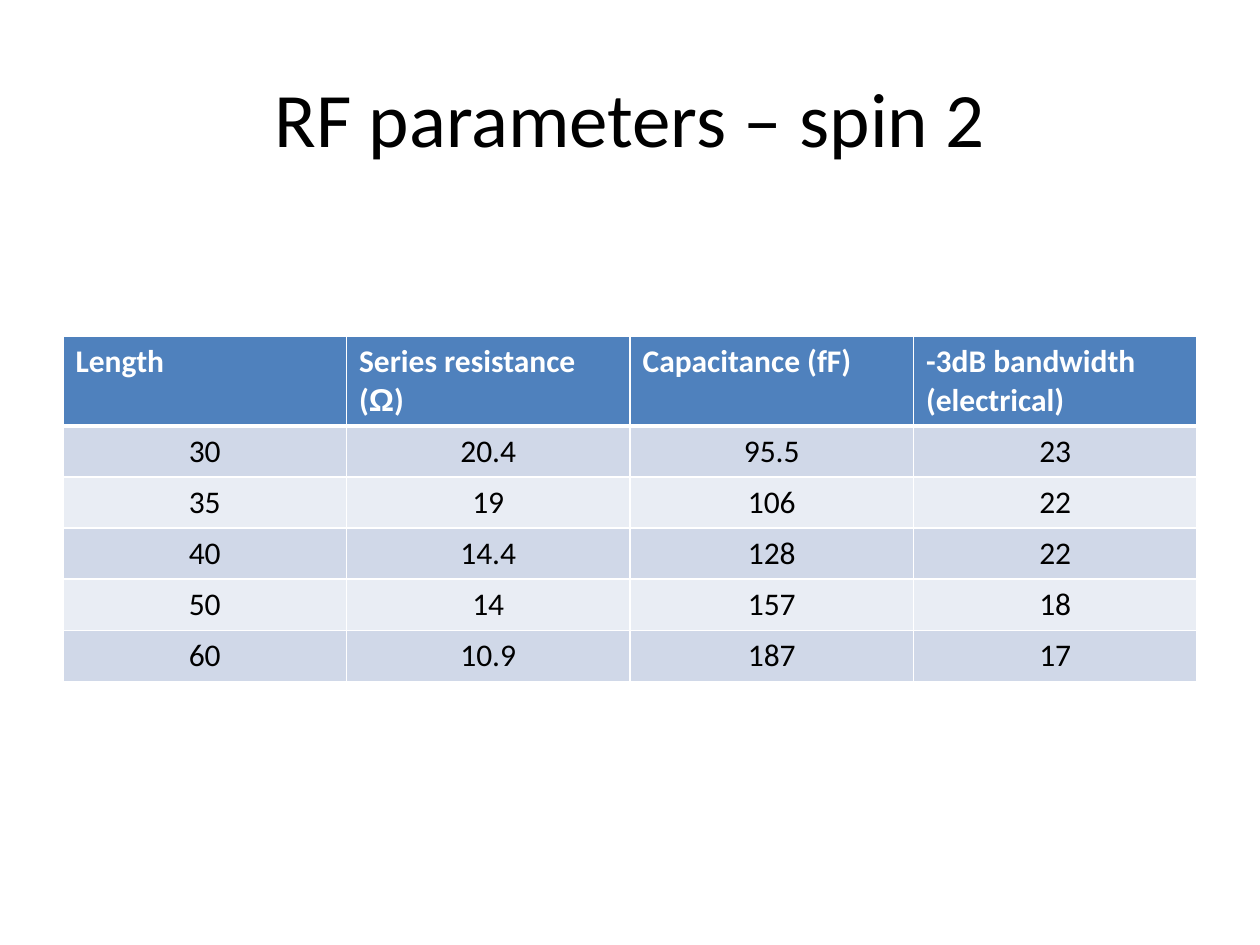
from dataclasses import dataclass

from lxml import etree
from pptx import Presentation
from pptx.dml.color import RGBColor
from pptx.enum.text import MSO_ANCHOR, PP_ALIGN
from pptx.oxml.ns import qn
from pptx.util import Cm, Pt

CENTER, LEFT = PP_ALIGN.CENTER, PP_ALIGN.LEFT
TOP, MIDDLE = MSO_ANCHOR.TOP, MSO_ANCHOR.MIDDLE
TITLE_ONLY = 5

COLORS = {
    "black": "000000",
    "white": "FFFFFF",
    "header": "4F81BD",
    "band_dark": "D0D8E8",
    "band_light": "E9EDF4",
}
FONT, SYMBOL_FONT = "Calibri", "Arial"
SYMBOL = "Ω"

HEADERS = ["Length", "Series resistance (Ω)", "Capacitance (fF)",
           "-3dB bandwidth (electrical)"]
ROWS = [
    ("30", "20.4", "95.5", "23"),
    ("35", "19", "106", "22"),
    ("40", "14.4", "128", "22"),
    ("50", "14", "157", "18"),
    ("60", "10.9", "187", "17"),
]
UNPADDED_COLUMNS = (1, 2)
LEFT_EDGE, WIDTH = Cm(1.27), Cm(22.86)
HEADER_HEIGHT, ROW_HEIGHT = Cm(1.78), Cm(1.03)


@dataclass
class CellStyle:
    fill: str
    color: str
    bold: bool
    align: PP_ALIGN
    anchor: MSO_ANCHOR
    top: float = 1
    bottom: float = 1
    padded: bool = True


def rgb(name: str) -> RGBColor:
    return RGBColor.from_string(COLORS[name])


def add_run(p, text: str, size: float, color: str, bold: bool = False,
            font: str = FONT) -> None:
    r = p.add_run()
    r.text = text
    for key, value in {"name": font, "size": Pt(size), "bold": bold}.items():
        setattr(r.font, key, value)
    r.font.color.rgb = rgb(color)


def add_border(cell, side: str, width: float) -> None:
    ln = etree.SubElement(cell._tc.get_or_add_tcPr(), qn(f"a:ln{side}"),
                          w=str(Pt(width)))
    fill = etree.SubElement(ln, qn("a:solidFill"))
    etree.SubElement(fill, qn("a:srgbClr"), val=COLORS["white"])


def fill_cell(cell, text: str, style: CellStyle) -> None:
    # Borders come before the fill in the cell properties
    for side, width in zip("LRTB", (1, 1, style.top, style.bottom)):
        add_border(cell, side, width)
    cell.fill.solid()
    cell.fill.fore_color.rgb = rgb(style.fill)
    cell.vertical_anchor = style.anchor
    if not style.padded:
        for side in ("left", "right", "top", "bottom"):
            setattr(cell, f"margin_{side}", 0)

    p = cell.text_frame.paragraphs[0]
    p.alignment = style.align
    before, symbol, after = text.partition(SYMBOL)
    for part, font in ((before, FONT), (symbol, SYMBOL_FONT), (after, FONT)):
        if part:
            add_run(p, part, 18, style.color, style.bold, font)


def add_title(s, text: str) -> None:
    sp = s.shapes.title
    place = {"left": LEFT_EDGE, "top": Cm(0.76), "width": WIDTH, "height": Cm(3.18)}
    for key, value in place.items():
        setattr(sp, key, value)
    tf = sp.text_frame
    tf.vertical_anchor = MIDDLE
    p = tf.paragraphs[0]
    p.alignment = CENTER
    add_run(p, text, 44, "black")


def add_parameter_table(s) -> None:
    height = HEADER_HEIGHT + len(ROWS) * ROW_HEIGHT
    table = s.shapes.add_table(len(ROWS) + 1, len(HEADERS), LEFT_EDGE, Cm(6.78),
                               WIDTH, height).table
    for i, row in enumerate(table.rows):
        row.height = ROW_HEIGHT if i else HEADER_HEIGHT

    # Header row with a thick rule below it
    header = CellStyle("header", "white", True, LEFT, TOP, bottom=3)
    for col, text in enumerate(HEADERS):
        fill_cell(table.cell(0, col), text, header)

    # Banded value rows
    for i, values in enumerate(ROWS, start=1):
        band = "band_dark" if i % 2 else "band_light"
        for col, text in enumerate(values):
            style = CellStyle(band, "black", False, CENTER, MIDDLE,
                              top=3 if i == 1 else 1,
                              padded=col not in UNPADDED_COLUMNS)
            fill_cell(table.cell(i, col), text, style)


def main() -> None:
    prs = Presentation()
    prs.slide_width, prs.slide_height = Cm(25.4), Cm(19.05)
    s = prs.slides.add_slide(prs.slide_layouts[TITLE_ONLY])
    add_title(s, "RF parameters – spin 2")
    add_parameter_table(s)
    prs.save("out.pptx")


if __name__ == "__main__":
    main()
